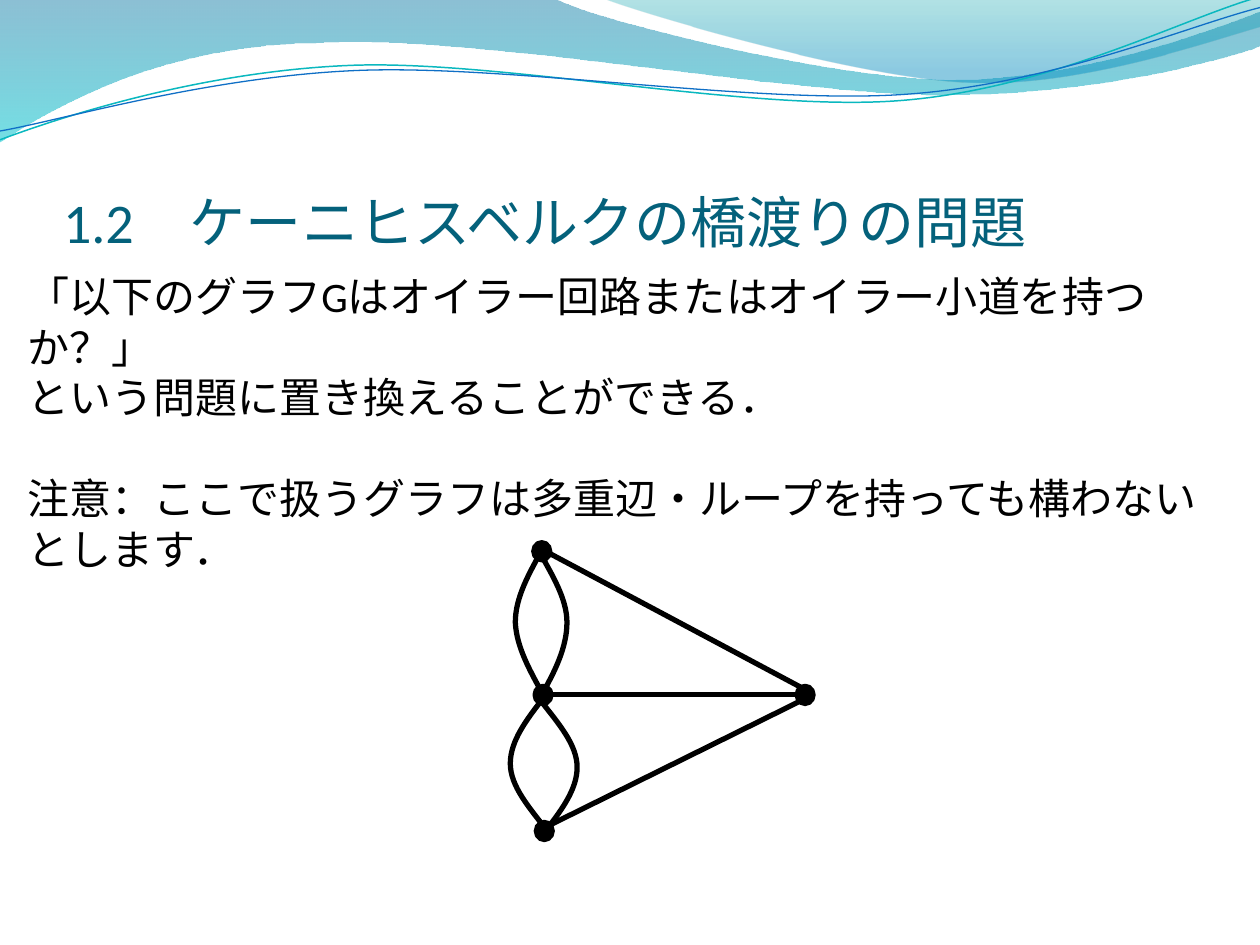
from lxml.etree import SubElement
from pptx import Presentation
from pptx.dml.color import RGBColor
from pptx.enum.shapes import MSO_CONNECTOR, MSO_SHAPE
from pptx.enum.text import MSO_ANCHOR, MSO_AUTO_SIZE, PP_ALIGN
from pptx.oxml.ns import qn
from pptx.util import Inches, Pt

CELL = Inches(0.01)  # the slide is a grid of 1000 columns by 750 rows
COLUMNS, ROWS = 1000, 750

THEME = {
    "font": "Calibri",
    "title": {"size": Pt(32), "color": "04617B"},
    "body": {"size": Pt(24), "color": "000000"},
    "graph": "000000",
    "node_line": 2,
    "edge_line": 3,
    # gradient stops: position, colour, opacity (all shares in percent)
    "wave": [(0, "0074A1", 45), (100, "00C6CF", 55)],
    "crest": [(0, "00A1A9", 30), (80, "008BBF", 45)],
    "ripples": [("0AB8BF", 0.85), ("0F6FC6", 0.75)],
}

# Outlines: a pair is a straight step, six numbers are a Bézier step.
WAVE = [(0, -1), (440, -1), (476, 17, 664, 63, 758, 63), (853, 63, 958, 26, 1000, 9),
        (1001, 36), (983, 44, 870, 76, 746, 75), (622, 75, 382, 28, 257, 34),
        (129, 35, 46, 83, -1, 113)]
CREST = [(479, -1), (509, 11, 682, 62, 769, 65), (856, 69, 961, 32, 1000, 21), (1000, 0)]
RIPPLES = [
    [(0, 111), (48, 93, 158, 57, 277, 52), (395, 47, 593, 89, 713, 80),
     (833, 71, 938, 15, 998, -2)],
    [(0, 104), (47, 96, 164, 61, 283, 56), (403, 51, 597, 83, 717, 75),
     (836, 67, 941, 21, 1000, 6)],
]

# Graph, relative to its box
NODES = {"top": (25, 7), "middle": (26, 121), "bottom": (27, 229), "right": (234, 121)}
EDGES = [((26, 121), (227, 121)), ((27, 7), (241, 121)), ((29, 226), (229, 127))]
ARCS = [((26, 5), (27, 123), -22), ((27, 123), (29, 229), -28),
        ((22, 6), (24, 123), 22), ((24, 126), (26, 232), 28)]


def apply_format(target, values):
    for name, value in values.items():
        setattr(target, name, value)


def format_font(font, style):
    apply_format(font, {"name": THEME["font"], "size": style["size"], "bold": False})
    font.color.rgb = RGBColor.from_string(style["color"])


def format_line(line, color, width):
    line.color.rgb = RGBColor.from_string(color)
    line.width = Pt(width)


def add_outline(slide, steps, closed=False, origin=(0, 0)):
    """Draw a freeform whose six-number steps become cubic curves."""
    left, top = origin
    points = [(left + x, top + y) for step in steps for x, y in zip(step[::2], step[1::2])]
    builder = slide.shapes.build_freeform(*points[0], scale=CELL)
    builder.add_line_segments(points[1:], close=closed)
    shape = builder.convert_to_shape()
    shape.shadow.inherit = False
    segments = iter(list(shape._element.iter(qn("a:lnTo"))))
    for step in steps[1:]:
        segment = next(segments)
        if len(step) == 6:
            curve = segment.makeelement(qn("a:cubicBezTo"))
            segment.addprevious(curve)
            for part in (segment, next(segments), next(segments)):
                curve.append(part[0])
                part.getparent().remove(part)
    return shape


def fill_gradient(shape, stops):
    shape.line.fill.background()
    shape.fill.gradient()
    gradient = shape._element.spPr.find(qn("a:gradFill"))
    for child in list(gradient):
        gradient.remove(child)
    stop_list = SubElement(gradient, qn("a:gsLst"))
    for position, color, opacity in stops:
        stop = SubElement(stop_list, qn("a:gs"), pos=str(position * 1000))
        shade = SubElement(stop, qn("a:srgbClr"), val=color)
        SubElement(shade, qn("a:alpha"), val=str(opacity * 1000))
    SubElement(gradient, qn("a:lin"), ang="5400000", scaled="0")


def add_banner(slide):
    for outline, stops in ((WAVE, THEME["wave"]), (CREST, THEME["crest"])):
        fill_gradient(add_outline(slide, outline, closed=True), stops)
    for outline, (color, width) in zip(RIPPLES, THEME["ripples"]):
        ripple = add_outline(slide, outline)
        ripple.fill.background()
        format_line(ripple.line, color, width)


def place(shape, box):
    names = ("left", "top", "width", "height")
    apply_format(shape, {name: value * CELL for name, value in zip(names, box)})


def set_title(slide, box, text):
    title = slide.shapes.title
    place(title, box)
    apply_format(title.text_frame, {
        "text": text, "word_wrap": True, "auto_size": MSO_AUTO_SIZE.NONE,
        "vertical_anchor": MSO_ANCHOR.BOTTOM, "margin_left": 0, "margin_right": 0,
        "margin_top": Inches(0.05), "margin_bottom": 0})
    paragraph = title.text_frame.paragraphs[0]
    paragraph.alignment = PP_ALIGN.LEFT
    format_font(paragraph.runs[0].font, THEME["title"])


def add_body(slide, box, lines):
    """Write (text, space before) pairs as paragraphs."""
    frame = slide.shapes.add_textbox(*(value * CELL for value in box)).text_frame
    frame.word_wrap = True
    for index, (text, space) in enumerate(lines):
        paragraph = frame.add_paragraph() if index else frame.paragraphs[0]
        paragraph.space_before = Pt(space)
        run = paragraph.add_run()
        run.text = text
        format_font(run.font, THEME["body"])


def arc_steps(start, end, bulge):
    """Two curves that swing sideways by bulge halfway between the ends."""
    (x0, y0), (x1, y1) = start, end

    def at(share, swing):
        return (round(x0 + (x1 - x0) * share + bulge * swing),
                round(y0 + (y1 - y0) * share))

    return [start, at(1 / 6, 0.5) + at(1 / 3, 1) + at(1 / 2, 1),
            at(2 / 3, 1) + at(5 / 6, 0.5) + end]


def add_graph(slide, box):
    left, top = box[:2]
    color = THEME["graph"]
    for x, y in NODES.values():
        node = slide.shapes.add_shape(MSO_SHAPE.OVAL, (left + x - 7) * CELL,
                                      (top + y - 7) * CELL, 14 * CELL, 15 * CELL)
        node.shadow.inherit = False
        node.fill.solid()
        node.fill.fore_color.rgb = RGBColor.from_string(color)
        format_line(node.line, color, THEME["node_line"])
    for (x0, y0), (x1, y1) in EDGES:
        edge = slide.shapes.add_connector(
            MSO_CONNECTOR.STRAIGHT, (left + x0) * CELL, (top + y0) * CELL,
            (left + x1) * CELL, (top + y1) * CELL)
        format_line(edge.line, color, THEME["edge_line"])
        SubElement(edge._element.spPr, qn("a:effectLst"))
    for arc in ARCS:
        shape = add_outline(slide, arc_steps(*arc), origin=(left, top))
        shape.fill.background()
        format_line(shape.line, color, THEME["edge_line"])


def main():
    presentation = Presentation()
    presentation.slide_width, presentation.slide_height = COLUMNS * CELL, ROWS * CELL
    slide = presentation.slides.add_slide(presentation.slide_layouts[5])
    add_banner(slide)
    set_title(slide, (50, 77, 900, 125), "1.2　ケーニヒスベルクの橋渡りの問題")
    add_body(slide, (12, 210, 980, 480), [
        ("「以下のグラフGはオイラー回路またはオイラー小道を持つか？」", 0),
        ("という問題に置き換えることができる．", 0),
        ("注意：ここで扱うグラフは多重辺・ループを持っても構わないとします．", 29),
    ])
    add_graph(slide, (405, 430, 241, 237))
    presentation.save("out.pptx")


if __name__ == "__main__":
    main()
